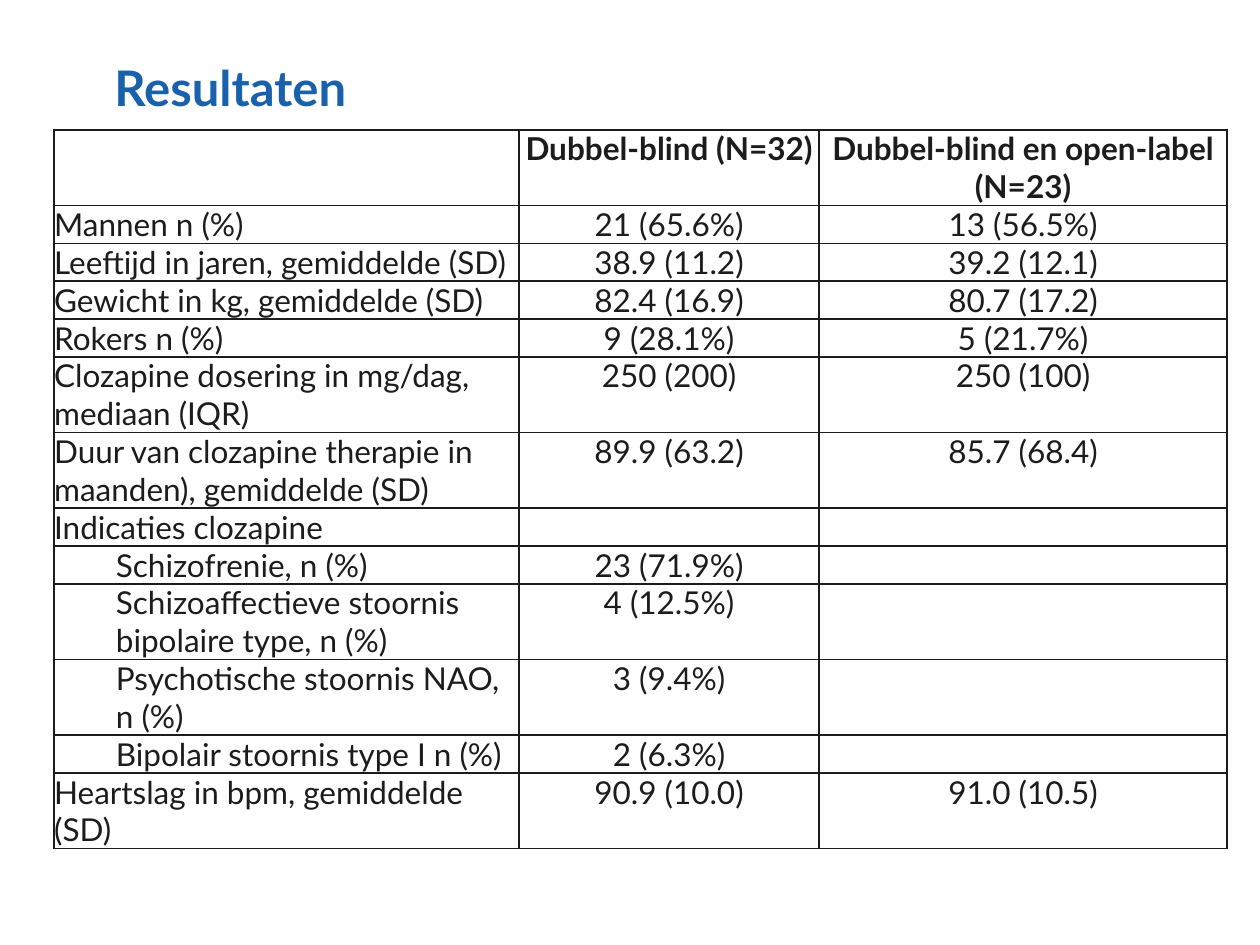
from typing import NamedTuple

from lxml import etree
from pptx import Presentation
from pptx.dml.color import RGBColor
from pptx.enum.text import MSO_ANCHOR, PP_ALIGN
from pptx.oxml.ns import qn
from pptx.util import Inches, Pt

TOP = MSO_ANCHOR.TOP
LEFT, CENTER = PP_ALIGN.LEFT, PP_ALIGN.CENTER

BLUE = RGBColor(0x19, 0x61, 0xAB)
INK = RGBColor(0x1C, 0x1C, 0x1C)
FONT = "Lato"

# Table grid: every row is one or two text lines high
LINE_HEIGHT = Inches(0.3)
COLUMN_WIDTHS = [Inches(width) for width in (3.69, 2.38, 3.24)]
INDENT = Inches(0.49)
BORDER_WIDTH = Pt(1)


class Row(NamedTuple):
    label: str
    double_blind: str = ""
    open_label: str = ""
    lines: int = 1
    indented: bool = False
    bold: bool = False


ROWS = [
    Row("", "Dubbel-blind (N=32)", "Dubbel-blind en open-label (N=23)", lines=2, bold=True),
    Row("Mannen n (%)", "21 (65.6%)", "13 (56.5%)"),
    Row("Leeftijd in jaren, gemiddelde (SD)", "38.9 (11.2)", "39.2 (12.1)"),
    Row("Gewicht in kg, gemiddelde (SD)", "82.4 (16.9)", "80.7 (17.2)"),
    Row("Rokers n (%)", "9 (28.1%)", "5 (21.7%)"),
    Row("Clozapine dosering in mg/dag, mediaan (IQR)", "250 (200)", "250 (100)", lines=2),
    Row("Duur van clozapine therapie in maanden), gemiddelde (SD)",
        "89.9 (63.2)", "85.7 (68.4)", lines=2),
    Row("Indicaties clozapine"),
    Row("Schizofrenie, n (%)", "23 (71.9%)", indented=True),
    Row("Schizoaffectieve stoornis bipolaire type, n (%)", "4 (12.5%)", lines=2, indented=True),
    Row("Psychotische stoornis NAO, n (%)", "3 (9.4%)", lines=2, indented=True),
    Row("Bipolair stoornis type I n (%)", "2 (6.3%)", indented=True),
    Row("Heartslag in bpm, gemiddelde (SD)", "90.9 (10.0)", "91.0 (10.5)", lines=2),
]


def style_font(font, size: int, color: RGBColor, bold: bool) -> None:
    font.name = FONT
    font.size = Pt(size)
    font.bold = bold
    font.color.rgb = color


def add_borders(cell) -> None:
    properties = cell._tc.get_or_add_tcPr()
    for position, side in enumerate(("a:lnL", "a:lnR", "a:lnT", "a:lnB")):
        line = etree.Element(qn(side), w=str(BORDER_WIDTH))
        fill = etree.SubElement(line, qn("a:solidFill"))
        etree.SubElement(fill, qn("a:srgbClr"), val=str(INK))
        properties.insert(position, line)


def fill_cell(cell, text: str, alignment, bold: bool, indented: bool) -> None:
    cell.margin_left = cell.margin_right = cell.margin_top = cell.margin_bottom = 0
    cell.vertical_anchor = TOP
    cell.fill.background()
    add_borders(cell)
    cell.text_frame.text = text
    paragraph = cell.text_frame.paragraphs[0]
    paragraph.alignment = alignment
    if indented:
        paragraph._p.get_or_add_pPr().set("marL", str(INDENT))
    for run in paragraph.runs:
        style_font(run.font, 18, INK, bold)
    if not text:  # keeps the line height of empty cells
        end = etree.SubElement(paragraph._p, qn("a:endParaRPr"), sz="1800")
        etree.SubElement(end, qn("a:latin"), typeface=FONT)


def add_title(slide, text: str) -> None:
    box = slide.shapes.add_textbox(Inches(0.81), Inches(0.41), Inches(8.25), Inches(0.89))
    box.text_frame.word_wrap = True
    box.text_frame.vertical_anchor = TOP
    box.text_frame.text = text
    style_font(box.text_frame.paragraphs[0].runs[0].font, 28, BLUE, True)


def add_results_table(slide, rows: list[Row]) -> None:
    height = LINE_HEIGHT * sum(row.lines for row in rows)
    frame = slide.shapes.add_table(len(rows), len(COLUMN_WIDTHS), Inches(0.43), Inches(1.03),
                                   sum(COLUMN_WIDTHS), height)
    table = frame.table
    table.first_row = table.horz_banding = False
    for column, width in zip(table.columns, COLUMN_WIDTHS):
        column.width = width
    for index, row in enumerate(rows):
        table.rows[index].height = LINE_HEIGHT * row.lines
        fill_cell(table.cell(index, 0), row.label, LEFT, row.bold, row.indented)
        for column, value in enumerate((row.double_blind, row.open_label), start=1):
            fill_cell(table.cell(index, column), value, CENTER, row.bold, False)


def main() -> None:
    presentation = Presentation()
    presentation.slide_width = Inches(10)
    presentation.slide_height = Inches(7.5)
    slide = presentation.slides.add_slide(presentation.slide_layouts[6])
    add_title(slide, "Resultaten")
    add_results_table(slide, ROWS)
    presentation.save("out.pptx")


if __name__ == "__main__":
    main()
